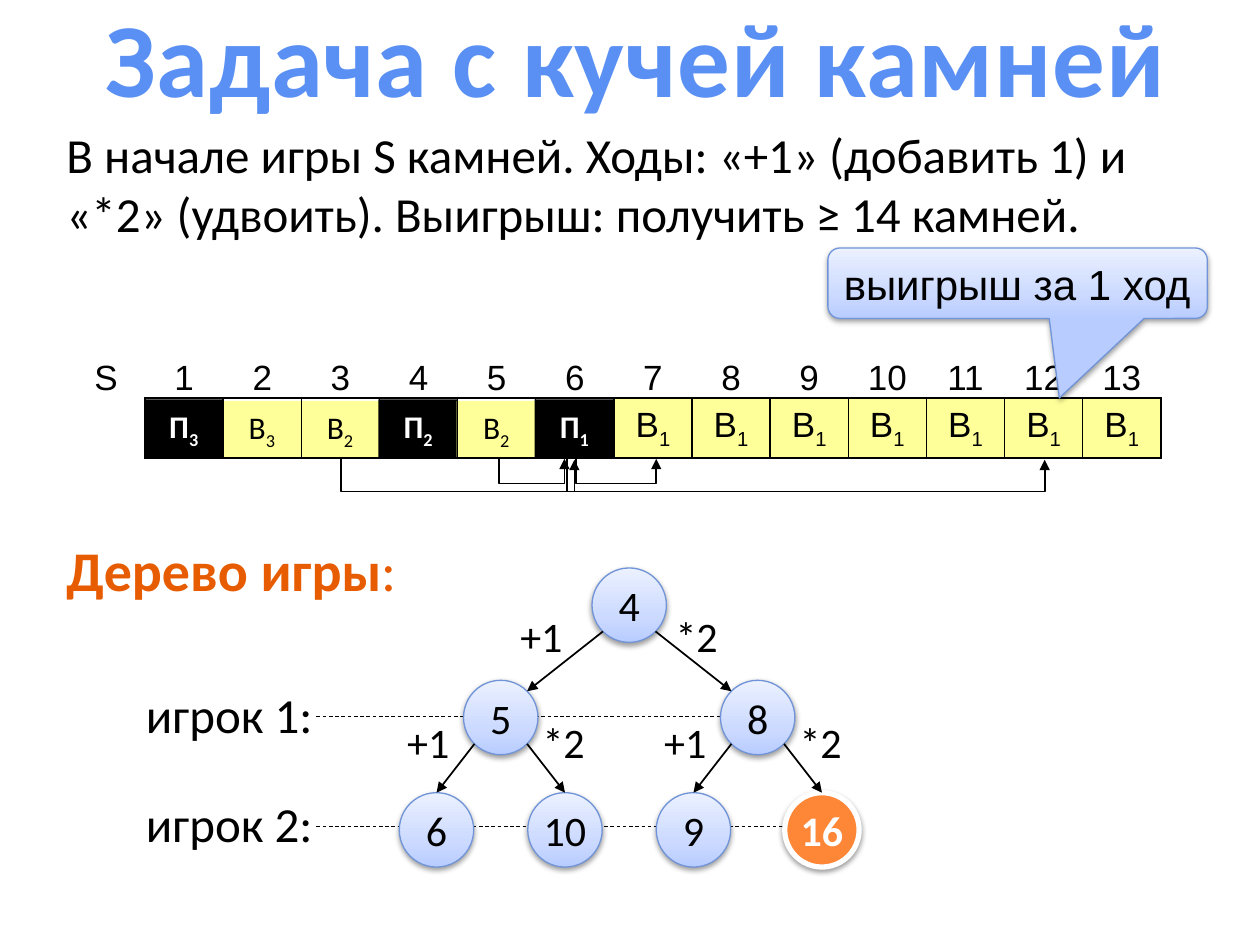
from copy import deepcopy
from dataclasses import dataclass
from pptx import Presentation
from pptx.dml.color import RGBColor
from pptx.enum.dml import MSO_LINE
from pptx.enum.shapes import MSO_CONNECTOR, MSO_SHAPE
from pptx.enum.text import MSO_ANCHOR, PP_ALIGN
from pptx.oxml import parse_xml
from pptx.oxml.ns import nsdecls, qn
from pptx.util import Cm, Pt

BOX, OVAL = MSO_SHAPE.RECTANGLE, MSO_SHAPE.OVAL
CALL = MSO_SHAPE.ROUNDED_RECTANGULAR_CALLOUT
LINE, DASH = MSO_CONNECTOR.STRAIGHT, MSO_LINE.DASH
LEFT, MID, RIGHT = PP_ALIGN.LEFT, PP_ALIGN.CENTER, PP_ALIGN.RIGHT
TOP, CENTER, LOW = MSO_ANCHOR.TOP, MSO_ANCHOR.MIDDLE, MSO_ANCHOR.BOTTOM


@dataclass(frozen=True)
class Theme:
    face: str = "Calibri"
    plain: str = "Arial"
    ink: str = "000000"
    white: str = "FFFFFF"
    win: str = "FFFF99"
    edge: str = "7094D7"
    head: str = "E75C01"
    goal: str = "FE8637"
    glow: tuple = ((0, "B8CCFF"), (0.35, "CCDAFF"), (1, "EBF1FF"))
    sky: tuple = ((0.25, "5A90F4"), (1, "3C65B0"))
    title: int = 60
    tree: int = 32
    body: int = 28
    node: int = 24
    cell: int = 20
    tile: int = 18


T = Theme()
COLS, STEP = 14, 22.05 / 14
NODE = 1.5


def rgb(code):
    return RGBColor.from_string(code)


def area(*nums):
    return [Cm(num) for num in nums]


def add_xml(node, tag, inner="", **attrs):
    words = " ".join(f'{key}="{val}"' for key, val in attrs.items())
    node.append(parse_xml(f'<a:{tag} {nsdecls("a")} {words}>{inner}</a:{tag}>'))


def blend(fill, root, stops, angle):
    fill.gradient()
    fill.gradient_angle = angle
    group = root.find(".//" + qn("a:gsLst"))
    while len(group) < len(stops):
        group.append(deepcopy(group[-1]))
    for stop, (pos, code) in zip(fill.gradient_stops, stops):
        stop.position = pos
        stop.color.rgb = rgb(code)


def write(frame, text, size, code=T.ink, face=T.face, align=LEFT, bold=False, sub=""):
    para = frame.paragraphs[0]
    para.alignment = align
    font = para.font
    font.size, font.name, font.bold = Pt(size), face, bold
    font.color.rgb = rgb(code)
    para.add_run().text = text
    if sub:
        run = para.add_run()
        run.text = sub
        run.font._element.set("baseline", "-25000")
    return para


def pad(frame, side=0):
    frame.margin_left = frame.margin_right = Cm(side)
    frame.margin_top = frame.margin_bottom = 0


def shape(slide, kind, spot, fill=None, line=None, width=0.75, shade=False):
    item = slide.shapes.add_shape(kind, *area(*spot))
    item.shadow.inherit = False
    if fill == T.glow:
        blend(item.fill, item._element.spPr, fill, 90)
    elif fill:
        item.fill.solid()
        item.fill.fore_color.rgb = rgb(fill)
    else:
        item.fill.background()
    if line:
        item.line.color.rgb = rgb(line)
        item.line.width = Pt(width)
    else:
        item.line.fill.background()
    if shade:
        tint = f'<a:srgbClr val="{T.ink}"><a:alpha val="38000"/></a:srgbClr>'
        add_xml(item._element.spPr.find(qn("a:effectLst")), "outerShdw", tint,
                blurRad=40000, dist=20000, dir=5400000, rotWithShape=0)
    return item


def label(slide, spot, text, size, wrap=True, **style):
    frame = slide.shapes.add_textbox(*area(*spot)).text_frame
    frame.word_wrap = wrap
    return write(frame, text, size, **style)


def ink(item, width, tip):
    item.line.color.rgb = rgb(T.ink)
    item.line.width = Pt(width)
    if tip:
        add_xml(item._element.spPr.find(qn("a:ln")), "tailEnd", type="triangle")


def link(slide, start, end, width=1, tip=True):
    item = slide.shapes.add_connector(LINE, *area(*start, *end))
    ink(item, width, tip)
    add_xml(item._element.spPr, "effectLst")
    return item


def track(slide, start, end, low, stop):
    path = slide.shapes.build_freeform(Cm(start), Cm(9.22))
    path.add_line_segments([area(start, low), area(end, low), area(end, stop)], close=False)
    item = path.convert_to_shape()
    item.shadow.inherit = False
    item.fill.background()
    ink(item, 1, True)


def tile(slide, col, mark, sub):
    lost = mark == "П"
    item = shape(slide, BOX, (1.33 + col * STEP, 8.05 if lost else 8.08, 1.6, 1.19 if lost else 1.17),
                 T.ink if lost else T.win)
    pad(item.text_frame)
    write(item.text_frame, mark, T.tile, T.white if lost else T.ink, align=MID, bold=lost, sub=sub)


def border(cell, sides):
    for side in "LRTB":
        inner = "<a:noFill/>"
        if side in sides:
            inner = f'<a:solidFill><a:srgbClr val="{T.ink}"/></a:solidFill>'
        add_xml(cell._tc.get_or_add_tcPr(), "ln" + side, inner, w=12700)


def grid(slide):
    table = slide.shapes.add_table(2, COLS, *area(1.35, 6.81, STEP * COLS, 2.42)).table
    table.first_row = table.horz_banding = False
    for col in range(COLS):
        table.columns[col].width = Cm(STEP)
        top, low = table.cell(0, col), table.cell(1, col)
        border(top, "B" if col else "")
        border(low, "LRTB" if col else "R")
        for cell in (top, low):
            pad(cell, 0.25)
            cell.fill.background()
        top.vertical_anchor, low.vertical_anchor = LOW, CENTER
        write(top.text_frame, str(col or "S"), T.cell, face=T.plain, align=MID)
        if col > 6:
            low.fill.solid()
            low.fill.fore_color.rgb = rgb(T.win)
            write(low.text_frame, "В", T.cell, face=T.plain, align=MID, sub="1")


def ball(slide, x, y, text, goal=False):
    spot = (x - NODE / 2, y - NODE / 2, NODE, NODE)
    look = (T.goal, T.white, 3) if goal else (T.glow, T.edge, 0.75)
    item = shape(slide, OVAL, spot, *look, shade=True)
    pad(item.text_frame)
    write(item.text_frame, text, T.node, T.white if goal else T.ink, align=MID, bold=goal)


def move(slide, x, y, text):
    item = shape(slide, OVAL, (x - 0.81, y - 0.75, 1.62, 1.5))
    pad(item.text_frame)
    write(item.text_frame, text, T.node, align=MID)


def tree(slide):
    rows = [["4"], ["5", "8"], ["6", "10", "9", "16"]]
    gaps = [(1.77, 1.36, 0.62), (1.46, 1.27, 0.49)]
    spots = [[8.8 + 2.59 * col for col in range(4)]]
    while len(spots[0]) > 1:
        pairs = zip(spots[0][::2], spots[0][1::2])
        spots.insert(0, [(one + two) / 2 for one, two in pairs])
    tops = [12.2 + 2.265 * row for row in range(3)]
    for num, y, end in ((1, 14.45, 14.73), (2, 16.66, 15.9)):
        link(slide, (6.38, y), (end, y), 0.5, False).line.dash_style = DASH
        para = label(slide, (2.51, y - 0.66, 3.79, 1.27), f"игрок {num}:", T.body, align=RIGHT)
        pad(para._parent)
    for row, names in enumerate(rows):
        for x, name in zip(spots[row], names):
            ball(slide, x, tops[row], name, name == "16")
    for row, (left, right, drop) in enumerate(gaps):
        rim = 0.53
        for col, x in enumerate(spots[row]):
            for side, sign in enumerate((-1, 1)):
                goal = spots[row + 1][2 * col + side]
                end = (goal, tops[2] - NODE / 2) if row else (goal - sign * rim, tops[1] - rim)
                link(slide, (x + sign * rim, tops[row] + rim), end)
            move(slide, x - left, tops[row] + drop, "+1")
            move(slide, x + right, tops[row] + drop, "*2")


def head(slide):
    title = slide.shapes.title
    title.left, title.top, title.width, title.height = area(0.41, 0.03, 24.82, 2.16)
    title.text_frame.vertical_anchor = CENTER
    para = write(title.text_frame, "Задача с кучей камней", T.title, align=MID, bold=True)
    font = para.runs[0].font
    blend(font.fill, font._element, T.sky, 270)
    font._element.set("spc", "50")


def main():
    deck = Presentation()
    deck.slide_width, deck.slide_height = area(25.4, 19.05)
    slide = deck.slides.add_slide(deck.slide_layouts[5])
    head(slide)
    for col, (mark, sub) in enumerate(("П3", "В3", "В2", "П2", "В2", "П1"), 1):
        tile(slide, col, mark, sub)
    label(slide, (1.09, 2.39, 23.44, 2.64),
          "В начале игры S камней. Ходы: «+1» (добавить 1) и «*2» (удвоить). "
          "Выигрыш: получить ≥ 14 камней.", T.body)
    grid(slide)
    call = shape(slide, CALL, (16.69, 5, 7.65, 1.42), T.glow, T.edge, shade=True)
    for num, val in enumerate((0.11, 1.63, 0.17)):
        call.adjustments[num] = val
    call.text_frame.word_wrap = False
    write(call.text_frame, "выигрыш за 1 ход", T.node, face=T.plain)
    for path in ((11.61, 13.23, 9.75, 9.25), (11.43, 21.06, 9.91, 9.27),
                 (10.06, 11.38, 9.75, 9.25), (6.88, 11.58, 9.91, 9.27)):
        track(slide, *path)
    para = label(slide, (1.09, 10.67, 7.49, 1.63), "Дерево игры", T.tree, False, code=T.head, bold=True)
    colon = para.add_run()
    colon.text, colon.font.bold = ":", False
    tree(slide)
    deck.save("out.pptx")


if __name__ == "__main__":
    main()
